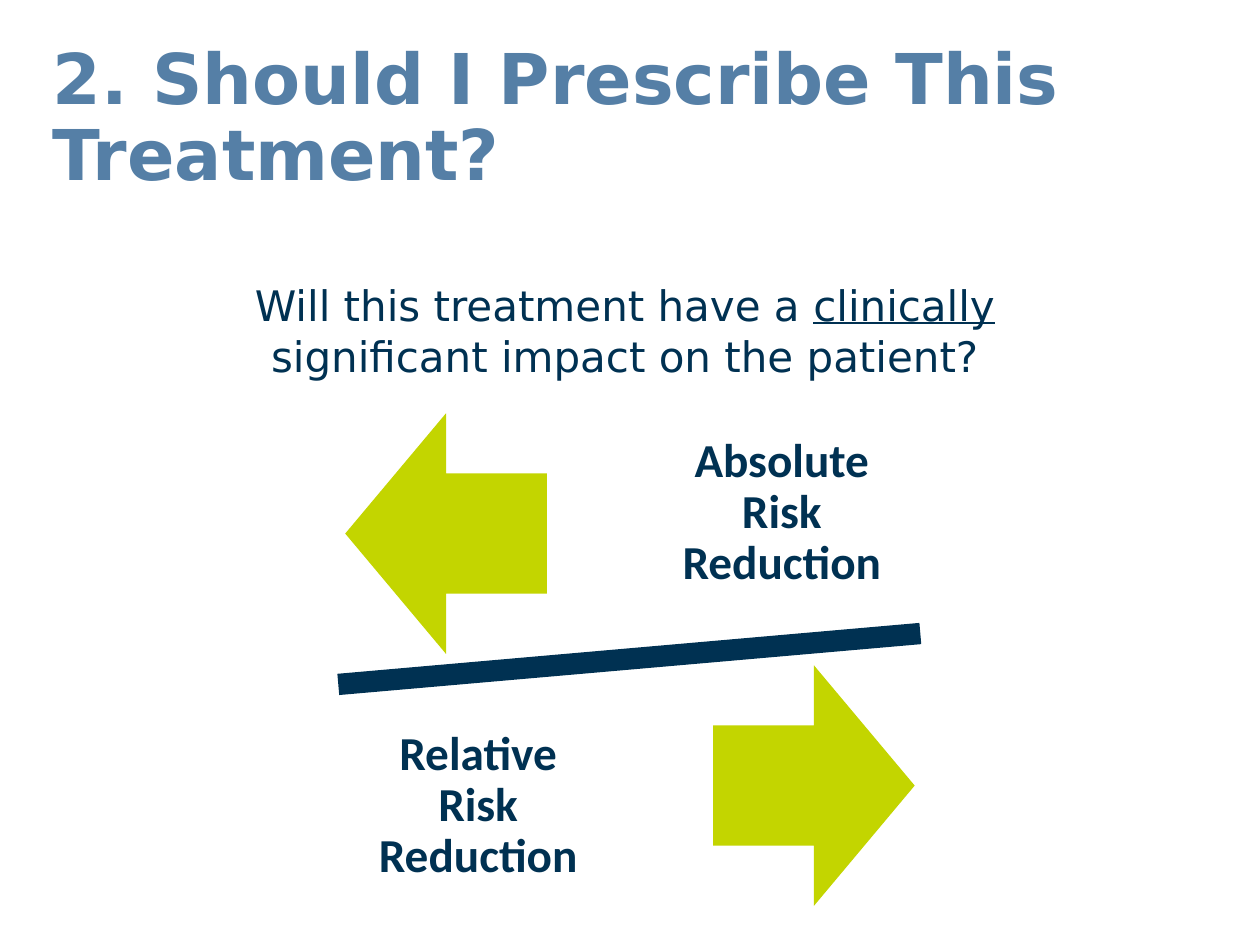
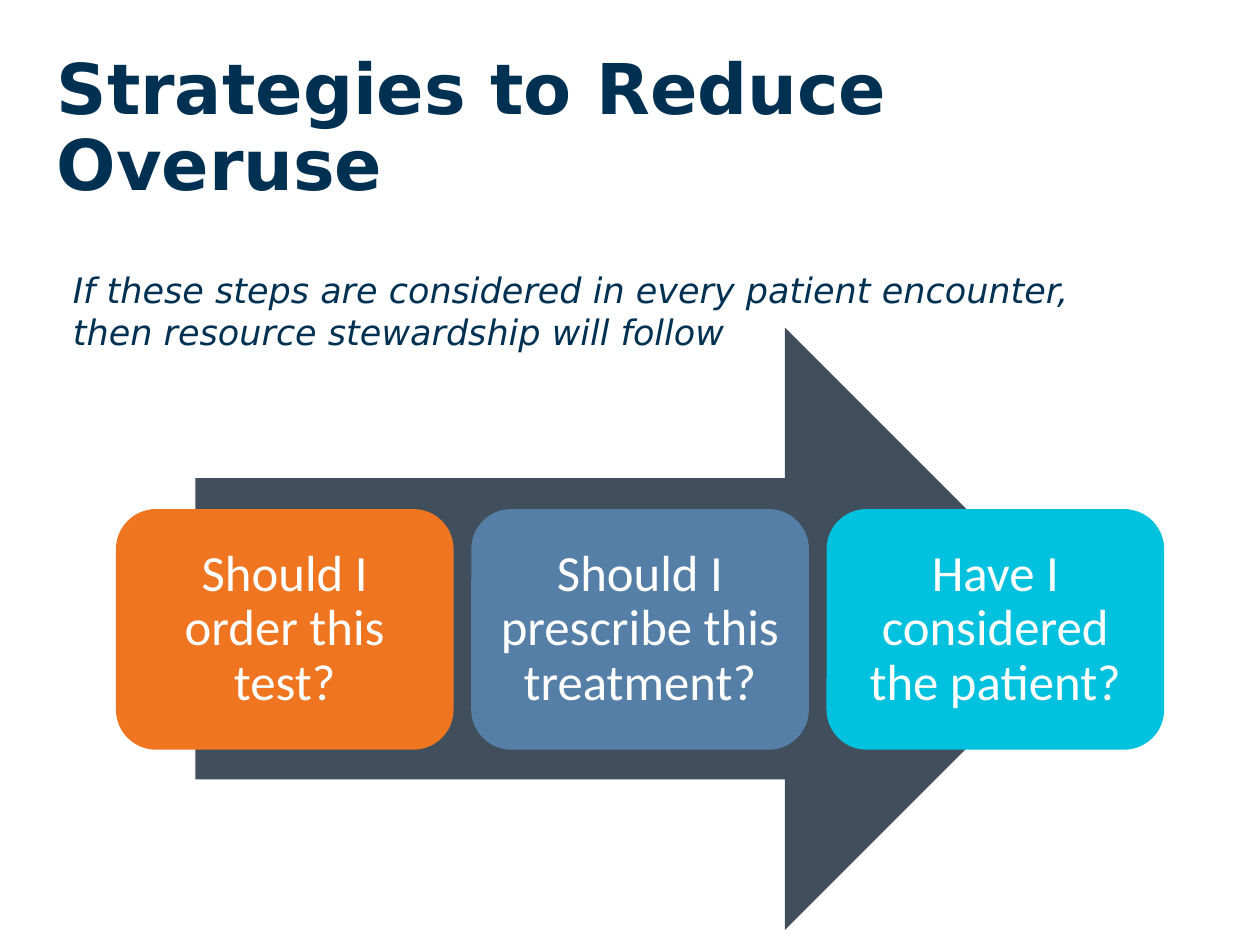
from pptx import Presentation
from pptx.dml.color import RGBColor
from pptx.enum.shapes import MSO_SHAPE
from pptx.enum.text import MSO_ANCHOR, MSO_AUTO_SIZE, PP_ALIGN
from pptx.util import Inches, Pt

WIDTH, HEIGHT = 10, 7.5
NAVY, STEEL, LIME, SLATE, WHITE = "003152", "557FA6", "C3D500", "414F5C", "FFFFFF"
HEADING_FONT, DIAGRAM_FONT = "DejaVu Sans", "Calibri"

TREATMENT_TITLE = "2. Should I Prescribe This Treatment?"
QUESTION = [
    ("Will this treatment have a ", {}),
    ("clinically", {"underline": True}),
    (" significant impact on the patient?", {}),
]
# label lines, label corner, arrow shape, arrow corner
RISKS = [
    (["Absolute Risk Reduction"], (5.19, 3.23), MSO_SHAPE.LEFT_ARROW, (2.74, 3.28)),
    (["Relative Risk", "Reduction"], (2.78, 5.56), MSO_SHAPE.RIGHT_ARROW, (5.66, 5.28)),
]
RISK_LABEL_SIZE, RISK_ARROW_SIZE = (2.03, 1.68), (1.6, 1.91)

STRATEGY_TITLE = "Strategies to Reduce Overuse"
PROMISE = ("If these steps are considered in every patient encounter, "
           "then resource stewardship will follow")
STEPS = [
    ("Should I order this test?", "EF7521"),
    ("Should I prescribe this treatment?", STEEL),
    ("Have I considered the patient?", "00C1DE"),
]
STEP_LEFT, STEP_TOP, STEP_WIDTH, STEP_HEIGHT, STEP_GAP = 0.92, 4.04, 2.68, 1.91, 0.14


def colour(value):
    return RGBColor.from_string(value)


def add_span(para, text, size, ink, font_name, **style):
    """Append a run; style holds bold, italic or underline."""
    span = para.add_run()
    span.text = text
    span.font.size, span.font.name = Pt(size), font_name
    span.font.color.rgb = colour(ink)
    for name, value in style.items():
        setattr(span.font, name, value)


def prepare_frame(box, align, margin=None, anchor=MSO_ANCHOR.TOP, line_spacing=None):
    """Set wrapping, margins and alignment; return the first paragraph."""
    frame = box.text_frame
    frame.word_wrap, frame.auto_size = True, MSO_AUTO_SIZE.NONE
    frame.vertical_anchor = anchor
    if margin is not None:
        frame.margin_left = frame.margin_right = Inches(margin)
        frame.margin_top = frame.margin_bottom = Inches(margin)
    para = frame.paragraphs[0]
    para.alignment, para.line_spacing = align, line_spacing
    return para


def add_text_box(page, *area):
    return page.shapes.add_textbox(*map(Inches, area))


def add_figure(page, kind, fill, *area):
    figure = page.shapes.add_shape(kind, *map(Inches, area))
    figure.shadow.inherit = False
    figure.fill.solid()
    figure.fill.fore_color.rgb = colour(fill)
    figure.line.fill.background()
    return figure


def add_label(box, lines, size, ink, margin, **style):
    """Write centred diagram text with a line break between lines."""
    para = prepare_frame(box, PP_ALIGN.CENTER, margin, MSO_ANCHOR.MIDDLE, 0.9)
    for number, line in enumerate(lines):
        if number:
            para.add_line_break()
        add_span(para, line, size, ink, DIAGRAM_FONT, **style)


def add_page(deck, title, ink, *area):
    page = deck.slides.add_slide(deck.slide_layouts[5])
    box = page.shapes.title
    box.left, box.top, box.width, box.height = map(Inches, area)
    para = prepare_frame(box, PP_ALIGN.LEFT, line_spacing=0.9)
    add_span(para, title, 40, ink, HEADING_FONT, bold=True)
    return page


def build_treatment_page(deck):
    page = add_page(deck, TREATMENT_TITLE, STEEL, 0.32, 0.3, 8.95, 0.82)
    balance = add_figure(page, MSO_SHAPE.MATH_MINUS, NAVY, 1.84, 4.87, 6.31, 0.72)
    balance.rotation = 355
    for lines, label_corner, arrow, arrow_corner in RISKS:
        add_figure(page, arrow, LIME, *arrow_corner, *RISK_ARROW_SIZE)
        label = add_text_box(page, *label_corner, *RISK_LABEL_SIZE)
        add_label(label, lines, 27, NAVY, 0.21, bold=True)
    para = prepare_frame(add_text_box(page, 1.47, 2.17, 6.98, 0.91), PP_ALIGN.CENTER)
    for text, style in QUESTION:
        add_span(para, text, 24, NAVY, HEADING_FONT, **style)


def build_strategy_page(deck):
    page = add_page(deck, STRATEGY_TITLE, NAVY, 0.35, 0.38, 8.62, 0.82)
    para = prepare_frame(add_text_box(page, 0.48, 2.08, 8.62, 1.26), PP_ALIGN.LEFT)
    add_span(para, PROMISE, 20, NAVY, HEADING_FONT, italic=True)
    add_figure(page, MSO_SHAPE.RIGHT_ARROW, SLATE, 1.55, 2.6, 7.07, 4.78)
    for column, (text, fill) in enumerate(STEPS):
        left = STEP_LEFT + column * (STEP_WIDTH + STEP_GAP)
        step = add_figure(page, MSO_SHAPE.ROUNDED_RECTANGLE, fill,
                          left, STEP_TOP, STEP_WIDTH, STEP_HEIGHT)
        add_label(step, [text], 29, WHITE, 0.12)


def main():
    deck = Presentation()
    deck.slide_width, deck.slide_height = Inches(WIDTH), Inches(HEIGHT)
    build_treatment_page(deck)
    build_strategy_page(deck)
    deck.save("out.pptx")


if __name__ == "__main__":
    main()
